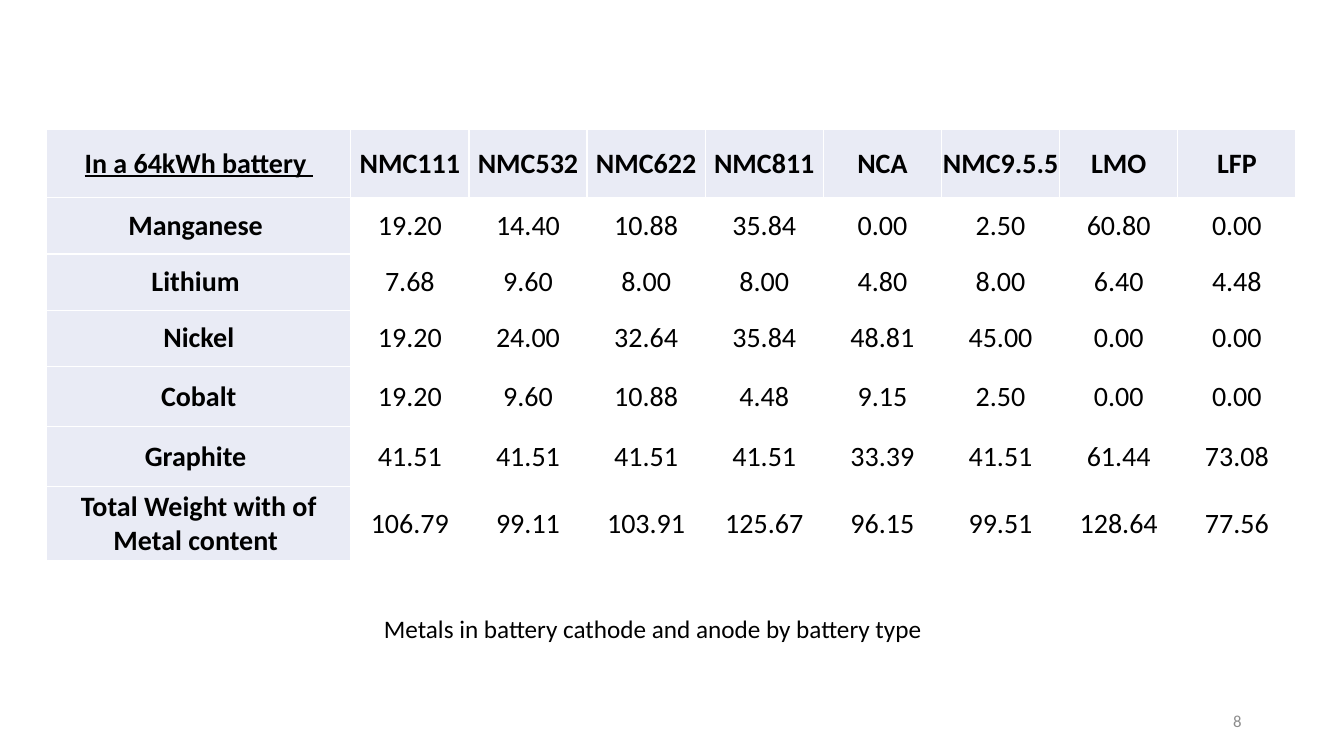
import pptx
import pptx.dml.color
import pptx.enum.text
import pptx.oxml
import pptx.oxml.ns
import pptx.util

Pt = pptx.util.Pt
ALIGN = pptx.enum.text.PP_ALIGN
ANCHOR = pptx.enum.text.MSO_ANCHOR

HEADINGS = ["In a 64kWh battery ", "NMC111", "NMC532", "NMC622", "NMC811",
            "NCA", "NMC9.5.5", "LMO", "LFP"]
METALS = [
    ("Manganese ", "19.20 14.40 10.88 35.84 0.00 2.50 60.80 0.00"),
    ("Lithium ", "7.68 9.60 8.00 8.00 4.80 8.00 6.40 4.48"),
    ("Nickel", "19.20 24.00 32.64 35.84 48.81 45.00 0.00 0.00"),
    ("Cobalt", "19.20 9.60 10.88 4.48 9.15 2.50 0.00 0.00"),
    ("Graphite ", "41.51 41.51 41.51 41.51 33.39 41.51 61.44 73.08"),
    ("Total Weight with of Metal content ",
     "106.79 99.11 103.91 125.67 96.15 99.51 128.64 77.56"),
]
CAPTION = "Metals in battery cathode and anode by battery type"
PAGE_NUMBER = "8"

COLUMN_WIDTHS = [217.2] + [84.4] * 8
ROW_HEIGHTS = [48.8, 40.2, 40.2, 40.2, 43, 43, 52.8]
TABLE_LEFT, TABLE_TOP = 33.4, 92.4
LABEL_FILL, BORDER, BLACK, GRAY = "E9EBF5", "FFFFFF", "000000", "8C8C8C"


def color(value):
    return pptx.dml.color.RGBColor.from_string(value)


def write(frame, text, size=20, fill=BLACK, bold=False, underline=False, align=ALIGN.CENTER):
    para = frame.paragraphs[0]
    para.alignment = align
    span = para.add_run()
    span.text = text
    span.font.name = "Calibri"
    span.font.size = Pt(size)
    span.font.bold = bold
    span.font.underline = underline
    span.font.color.rgb = color(fill)


def add_borders(cell):
    properties = cell._tc.get_or_add_tcPr()
    for side in ("lnL", "lnR", "lnT", "lnB"):
        properties.append(pptx.oxml.parse_xml(
            f'<a:{side} {pptx.oxml.ns.nsdecls("a")} w="{Pt(1)}"><a:solidFill>'
            f'<a:srgbClr val="{BORDER}"/></a:solidFill></a:{side}>'))


def add_label(page, text, left, top, width, height, wrap, anchor, **style):
    box = page.shapes.add_textbox(Pt(left), Pt(top), Pt(width), Pt(height))
    box.text_frame.word_wrap = wrap
    box.text_frame.vertical_anchor = anchor
    write(box.text_frame, text, **style)


def add_metal_table(page):
    rows = [HEADINGS] + [[metal] + values.split() for metal, values in METALS]
    table = page.shapes.add_table(
        len(rows), len(HEADINGS), Pt(TABLE_LEFT), Pt(TABLE_TOP),
        Pt(sum(COLUMN_WIDTHS)), Pt(sum(ROW_HEIGHTS))).table
    table.first_row = table.horz_banding = False
    for column, width in zip(table.columns, COLUMN_WIDTHS):
        column.width = Pt(width)
    for row, height in zip(table.rows, ROW_HEIGHTS):
        row.height = Pt(height)
    for r, texts in enumerate(rows):
        for c, text in enumerate(texts):
            cell = table.cell(r, c)
            cell.margin_left = cell.margin_right = cell.margin_top = cell.margin_bottom = 0
            cell.vertical_anchor = ANCHOR.MIDDLE
            add_borders(cell)
            is_label = r == 0 or c == 0
            if is_label:
                cell.fill.solid()
                cell.fill.fore_color.rgb = color(LABEL_FILL)
            else:
                cell.fill.background()
            write(cell.text_frame, text, bold=is_label, underline=r == c == 0)


def main():
    deck = pptx.Presentation()
    deck.slide_width, deck.slide_height = Pt(960), Pt(540)
    page = deck.slides.add_slide(deck.slide_layouts[6])
    add_metal_table(page)
    add_label(page, CAPTION, 267.1, 434.2, 404, 29, False, ANCHOR.TOP,
              size=18, align=ALIGN.LEFT)
    add_label(page, PAGE_NUMBER, 678, 500.5, 216, 28.75, True, ANCHOR.MIDDLE,
              size=12, fill=GRAY, align=ALIGN.RIGHT)
    deck.save("out.pptx")


if __name__ == "__main__":
    main()
